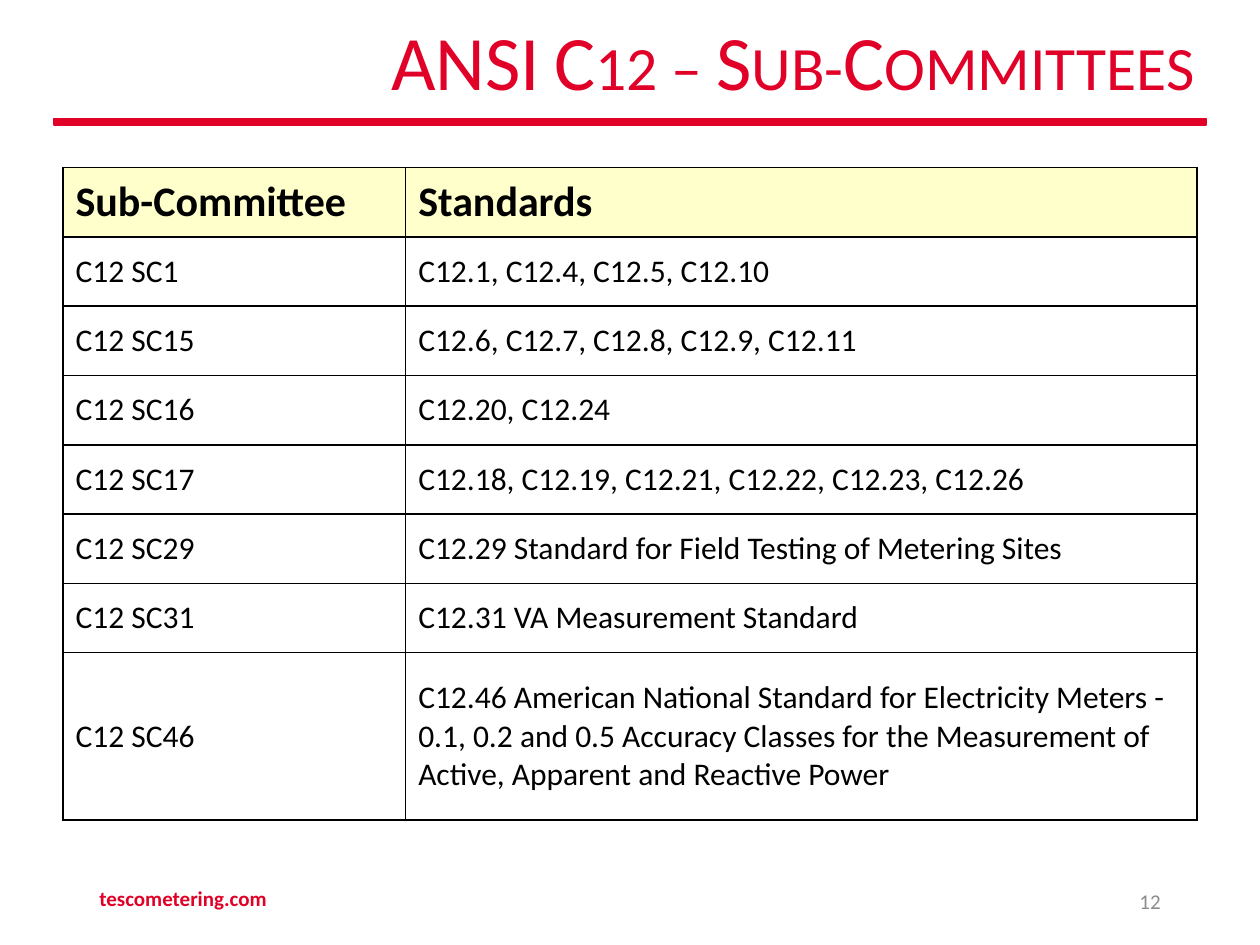
import pptx
import pptx.dml.color
import pptx.enum.shapes
import pptx.enum.text
import pptx.oxml
import pptx.oxml.ns
import pptx.util

Inches = pptx.util.Inches
Pt = pptx.util.Pt
ALIGN = pptx.enum.text.PP_ALIGN
MIDDLE = pptx.enum.text.MSO_ANCHOR.MIDDLE

COLORS = {
    "red": "E10027",
    "black": "000000",
    "header": "FFFFCC",
    "gray": "8C8C8C",
}
FONT = "Calibri"
COLUMN_WIDTHS = (2.72, 6.28)
ROW_HEIGHT = 0.55
LAST_ROW_HEIGHT = 1.33
ROWS = [
    ("Sub-Committee", "Standards"),
    ("C12 SC1", "C12.1, C12.4, C12.5, C12.10"),
    ("C12 SC15", "C12.6, C12.7, C12.8, C12.9, C12.11"),
    ("C12 SC16", "C12.20, C12.24"),
    ("C12 SC17", "C12.18, C12.19, C12.21, C12.22, C12.23, C12.26"),
    ("C12 SC29", "C12.29 Standard for Field Testing of Metering Sites"),
    ("C12 SC31", "C12.31 VA Measurement Standard"),
    ("C12 SC46", "C12.46 American National Standard for Electricity Meters - "
                 "0.1, 0.2 and 0.5 Accuracy Classes for the Measurement of "
                 "Active, Apparent and Reactive Power"),
]


def rgb(name):
    return pptx.dml.color.RGBColor.from_string(COLORS[name])


def write(text_frame, text, size, color, bold=False, align=ALIGN.LEFT):
    """Fill a text frame with one formatted paragraph and return it."""
    text_frame.word_wrap = True
    text_frame.text = text
    paragraph = text_frame.paragraphs[0]
    paragraph.alignment = align
    paragraph.font.name = FONT
    paragraph.font.size = Pt(size)
    paragraph.font.bold = bold
    paragraph.font.color.rgb = rgb(color)
    return paragraph


def add_title(slide, text):
    title = slide.shapes.title
    title.left, title.top = Inches(1.7), Inches(0.15)
    title.width, title.height = Inches(7.88), Inches(0.74)
    frame = title.text_frame
    frame.auto_size = pptx.enum.text.MSO_AUTO_SIZE.NONE
    frame.vertical_anchor = MIDDLE
    paragraph = write(frame, text, 44, "red", align=ALIGN.RIGHT)
    paragraph.line_spacing = 0.9
    paragraph.runs[0]._r.get_or_add_rPr().set("cap", "small")


def add_rule(slide):
    rule = slide.shapes.add_shape(
        pptx.enum.shapes.MSO_SHAPE.RECTANGLE,
        Inches(0.43), Inches(0.94), Inches(9.14), Inches(0.05))
    rule.shadow.inherit = False
    rule.fill.solid()
    rule.fill.fore_color.rgb = rgb("red")
    rule.line.color.rgb = rgb("red")
    rule.line.width = Pt(1)


def add_borders(cell):
    """Draw the four sides of a cell; they must precede its fill."""
    properties = cell._tc.get_or_add_tcPr()
    for position, side in enumerate(("lnL", "lnR", "lnT", "lnB")):
        properties.insert(position, pptx.oxml.parse_xml(
            f'<a:{side} {pptx.oxml.ns.nsdecls("a")} w="{Pt(1)}">'
            f'<a:solidFill><a:srgbClr val="{COLORS["black"]}"/></a:solidFill>'
            f'</a:{side}>'))


def add_standards_table(slide):
    heights = [ROW_HEIGHT] * (len(ROWS) - 1) + [LAST_ROW_HEIGHT]
    table = slide.shapes.add_table(
        len(ROWS), len(COLUMN_WIDTHS), Inches(0.5), Inches(1.33),
        Inches(sum(COLUMN_WIDTHS)), Inches(sum(heights))).table
    table.horz_banding = False
    for column, width in zip(table.columns, COLUMN_WIDTHS):
        column.width = Inches(width)
    for row_index, (row, height, texts) in enumerate(zip(table.rows, heights, ROWS)):
        row.height = Inches(height)
        is_header = row_index == 0
        for cell, text in zip(row.cells, texts):
            if is_header:
                cell.fill.solid()
                cell.fill.fore_color.rgb = rgb("header")
            else:
                cell.fill.background()
            add_borders(cell)
            cell.vertical_anchor = MIDDLE
            write(cell.text_frame, text, 24 if is_header else 18, "black", is_header)


def add_footer(slide, text, left, top, width, color, bold=False, align=ALIGN.LEFT):
    box = slide.shapes.add_textbox(
        Inches(left), Inches(top), Inches(width), Inches(0.4))
    box.text_frame.vertical_anchor = MIDDLE
    write(box.text_frame, text, 12, color, bold, align)


def main():
    presentation = pptx.Presentation()
    presentation.slide_width = Inches(10)
    presentation.slide_height = Inches(7.5)
    slide = presentation.slides.add_slide(
        presentation.slide_layouts.get_by_name("Title Only"))
    add_rule(slide)
    add_title(slide, "ANSI C12 – Sub-Committees")
    add_standards_table(slide)
    add_footer(slide, "tescometering.com", 0.69, 6.93, 3.38, "red", bold=True)
    add_footer(slide, "12", 7.06, 6.95, 2.25, "gray", align=ALIGN.RIGHT)
    presentation.save("out.pptx")


if __name__ == "__main__":
    main()
